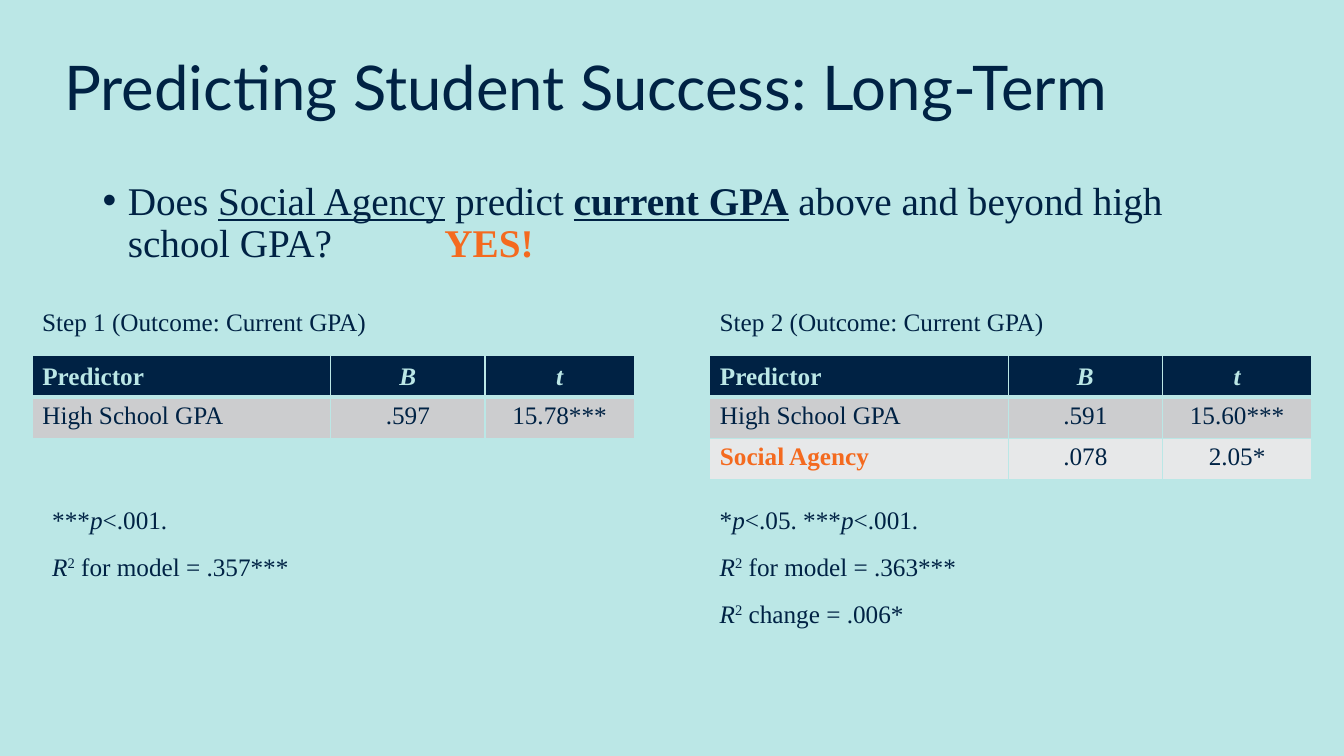
from dataclasses import dataclass, field

from lxml import etree
from pptx import Presentation
from pptx import util as u
from pptx.dml.color import RGBColor
from pptx.enum import text
from pptx.oxml import ns

NAVY, AQUA, ORANGE = "002244", "BBE7E6", "F46A1F"
GRAY, LIGHT_GRAY = "CCCDCF", "E7E8E9"
SERIF = "Times New Roman"
COLUMN_WIDTHS = (2.96, 1.53, 1.48)
ROW_HEIGHT = 0.41
TABLE_TOP, CAPTION_TOP, RESULTS_TOP = 3.53, 2.99, 4.95


@dataclass
class Run:
    text: str
    format: dict = field(default_factory=dict)
    color: str = NAVY
    baseline: int = 0


@dataclass
class TextBox:
    left: float
    top: float
    width: float
    height: float
    paragraphs: list[list[Run]]
    size: int = 18
    font: str = SERIF
    frame: dict = field(default_factory=dict)
    paragraph: dict = field(default_factory=dict)
    gap: int = 0
    bullet: str = ""


@dataclass
class Step:
    left: float
    results_left: float
    results_height: float
    caption: str
    rows: list[tuple[str, str, str]]
    results: list[list[Run]]


def rgb(color: str) -> RGBColor:
    return RGBColor.from_string(color)


def apply(target, values: dict) -> None:
    for name, value in values.items():
        setattr(target, name, value)


def add_run(paragraph, run: Run, size: int, font: str) -> None:
    part = paragraph.add_run()
    part.text = run.text
    apply(part.font, {"size": u.Pt(size), "name": font, **run.format})
    part.font.color.rgb = rgb(run.color)
    if run.baseline:
        part._r.get_or_add_rPr().set("baseline", str(run.baseline))


def add_bullet(paragraph, symbol: str) -> None:
    properties = paragraph._p.get_or_add_pPr()
    properties.set("marL", str(u.Inches(0.25)))
    properties.set("indent", str(u.Inches(-0.25)))
    etree.SubElement(properties, ns.qn("a:buFont"), typeface="Arial")
    etree.SubElement(properties, ns.qn("a:buChar"), char=symbol)


def add_text(slide, box: TextBox) -> None:
    shape = slide.shapes.add_textbox(*map(u.Inches, (box.left, box.top, box.width, box.height)))
    frame = shape.text_frame
    apply(frame, {"word_wrap": True, **box.frame})
    for index, runs in enumerate(box.paragraphs):
        paragraph = frame.add_paragraph() if index else frame.paragraphs[0]
        if box.bullet:
            add_bullet(paragraph, box.bullet)
        apply(paragraph, box.paragraph)
        if index and box.gap:
            paragraph.space_before = u.Pt(box.gap)
        for run in runs:
            add_run(paragraph, run, box.size, box.font)


def add_borders(cell, bottom: float) -> None:
    properties = cell._tc.get_or_add_tcPr()
    widths = {"lnL": 1, "lnR": 1, "lnT": 1, "lnB": bottom}
    for index, (side, width) in enumerate(widths.items()):
        line = etree.Element(ns.qn(f"a:{side}"), w=str(u.Pt(width)))
        fill = etree.SubElement(line, ns.qn("a:solidFill"))
        etree.SubElement(fill, ns.qn("a:srgbClr"), val=AQUA)
        properties.insert(index, line)


def add_predictors(slide, step: Step) -> None:
    rows = [("Predictor", "B", "t"), *step.rows]
    frame = slide.shapes.add_table(
        len(rows), len(COLUMN_WIDTHS), u.Inches(step.left), u.Inches(TABLE_TOP),
        u.Inches(sum(COLUMN_WIDTHS)), u.Inches(ROW_HEIGHT * len(rows)))
    table = frame.table
    for column, width in zip(table.columns, COLUMN_WIDTHS):
        column.width = u.Inches(width)
    for row_index, values in enumerate(rows):
        table.rows[row_index].height = u.Inches(ROW_HEIGHT)
        header = row_index == 0
        for column_index, value in enumerate(values):
            cell = table.cell(row_index, column_index)
            cell.fill.solid()
            cell.fill.fore_color.rgb = rgb((NAVY, GRAY, LIGHT_GRAY)[row_index])
            add_borders(cell, 3 if header else 1)
            cell.vertical_anchor = text.MSO_ANCHOR.MIDDLE if header else text.MSO_ANCHOR.TOP
            paragraph = cell.text_frame.paragraphs[0]
            if column_index:
                paragraph.alignment = text.PP_ALIGN.CENTER
            highlight = value == "Social Agency"
            color = AQUA if header else ORANGE if highlight else NAVY
            style = {"bold": header or highlight, "italic": header and column_index > 0}
            add_run(paragraph, Run(value, style, color), 18, SERIF)


def significance(*levels: tuple[str, str]) -> list[Run]:
    return [run for stars, limit in levels
            for run in (Run(stars), Run("p", {"italic": True}), Run(limit))]


def r_squared(label: str) -> list[Run]:
    return [Run("R", {"italic": True}), Run("2", baseline=30000), Run(label)]


STEPS = [
    Step(0.32, 0.42, 0.88, "Step 1 (Outcome: Current GPA)",
         [("High School GPA", ".597", "15.78***")],
         [significance(("***", "<.001.")), r_squared(" for model = .357***")]),
    Step(7.04, 7.04, 1.35, "Step 2 (Outcome: Current GPA)",
         [("High School GPA", ".591", "15.60***"), ("Social Agency", ".078", "2.05*")],
         [significance(("*", "<.05. "), ("***", "<.001.")),
          r_squared(" for model = .363***"), r_squared(" change = .006*")]),
]

QUESTION = [
    Run("Does "),
    Run("Social Agency", {"underline": True}),
    Run(" predict "),
    Run("current GPA", {"bold": True, "underline": True}),
    Run(" above and beyond high school GPA?"),
]


def main() -> None:
    presentation = Presentation()
    presentation.slide_width = u.Inches(13.33)
    presentation.slide_height = u.Inches(7.5)
    slide = presentation.slides.add_slide(presentation.slide_layouts[6])
    slide.background.fill.solid()
    slide.background.fill.fore_color.rgb = rgb(AQUA)

    tight = {"line_spacing": 0.9}
    add_text(slide, TextBox(
        0.54, 0.17, 11.5, 1.45, [[Run("Predicting Student Success: Long-Term")]], 44, "Lato",
        {"vertical_anchor": text.MSO_ANCHOR.MIDDLE}, tight))
    add_text(slide, TextBox(0.92, 1.75, 11.5, 5.01, [QUESTION], 28, paragraph=tight, bullet="•"))
    for step in STEPS:
        add_predictors(slide, step)
        add_text(slide, TextBox(
            step.left, CAPTION_TOP, sum(COLUMN_WIDTHS), ROW_HEIGHT, [[Run(step.caption)]]))
        add_text(slide, TextBox(
            step.results_left, RESULTS_TOP, 5.5, step.results_height, step.results, gap=12))
    add_text(slide, TextBox(
        4.31, 2.12, 1.2, 0.57, [[Run("YES!", {"bold": True}, ORANGE)]], 28))
    presentation.save("out.pptx")


if __name__ == "__main__":
    main()
